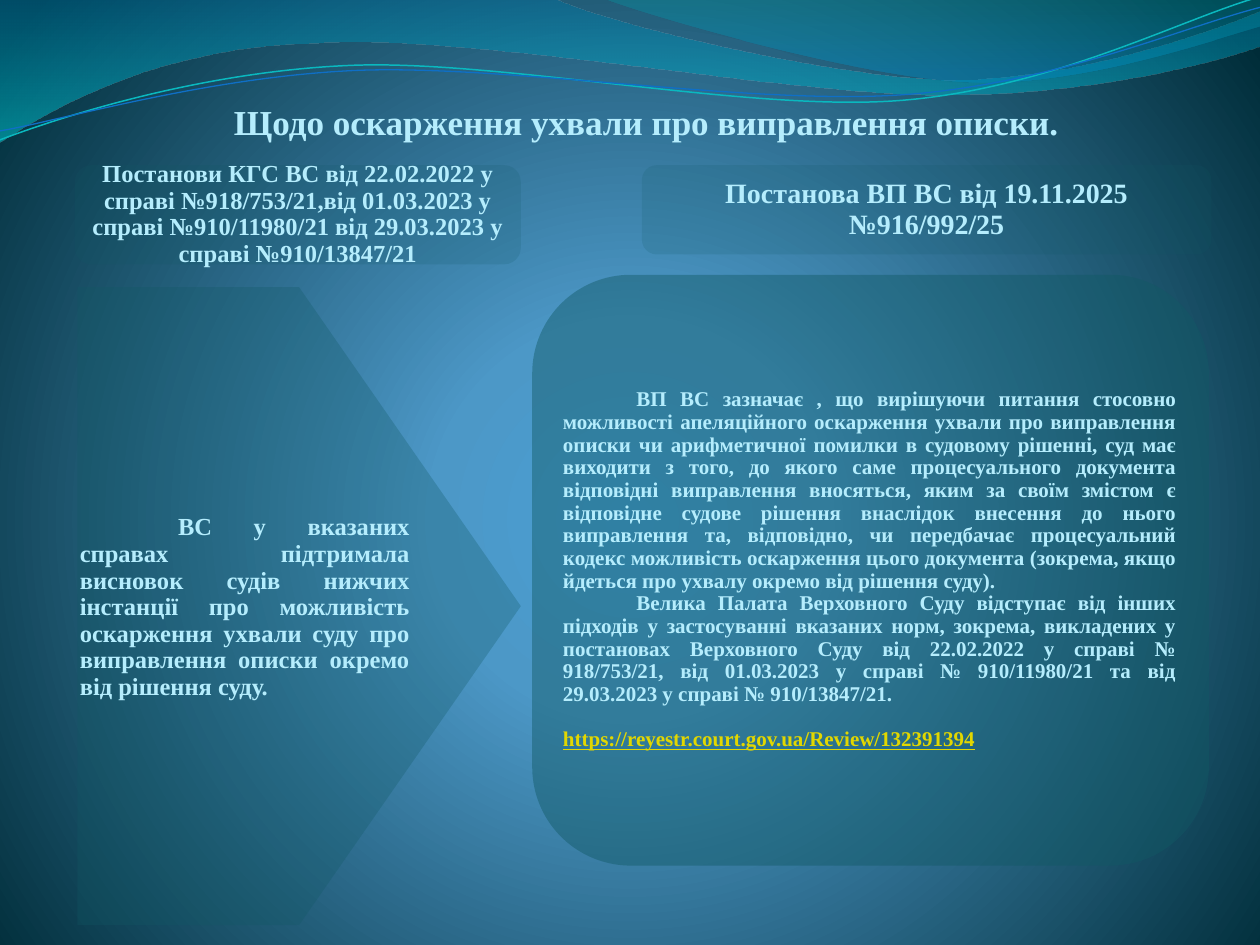
from lxml import etree
from pptx import Presentation
from pptx import util as u
from pptx.dml.color import RGBColor
from pptx.enum import shapes, text
from pptx.oxml.ns import qn

TEXT = "B5EDFD"
PANEL = "115964"
LINK = "E2D700"
FONT = "Times New Roman"


def rgb(value):
    return RGBColor.from_string(value)


def fade(shape, *opacities):
    """Give the colours of a shape, in order, an opacity in percent."""
    colors = list(shape._element.spPr.iter(qn("a:srgbClr")))
    for color, opacity in zip(colors, opacities):
        etree.SubElement(color, qn("a:alpha")).set("val", str(opacity * 1000))


presentation = Presentation()
presentation.slide_width = u.Cm(25.4)
presentation.slide_height = u.Cm(19.05)
slide = presentation.slides.add_slide(presentation.slide_layouts[6])

# Radial background
slide.background.fill.gradient()
gradient = slide._element.find(".//" + qn("a:gradFill"))
for child in list(gradient):
    gradient.remove(child)
stop_list = etree.SubElement(gradient, qn("a:gsLst"))
for position, value in [(0, "4AA0D6"), (25, "4C98C7"), (100, "002C38")]:
    stop = etree.SubElement(stop_list, qn("a:gs"), pos=str(position * 1000))
    etree.SubElement(stop, qn("a:srgbClr"), val=value)
circle = etree.SubElement(gradient, qn("a:path"), path="circle")
etree.SubElement(circle, qn("a:fillToRect"), l="10000", t="110000", r="10000", b="100000")

# Waves at the top, in cm: pairs are straight steps, sixes are Bezier curves.
# Each has gradient stops (position, colour, opacity) or a line (colour, width).
waves = [
    ([(0, 0), (11.18, -0.03), (12.09, 0.43, 16.87, 1.6, 19.25, 1.6),
      (21.67, 1.6, 24.33, 0.66, 25.4, 0.23), (25.43, 0.91),
      (24.97, 1.12, 22.1, 1.93, 18.95, 1.91), (15.8, 1.91, 9.7, 0.71, 6.53, 0.86),
      (3.25, 0.91, 1.17, 2.11, -0.03, 2.87)],
     [(0, "0074A1", 45), (1, "00C6CF", 55)], None),
    ([(12.17, -0.03), (12.93, 0.28, 17.32, 1.57, 19.53, 1.65),
      (21.74, 1.75, 24.41, 0.81, 25.4, 0.53), (25.4, 0)],
     [(0, "00A1A9", 30), (0.8, "008BBF", 45)], None),
    ([(0, 2.82), (1.22, 2.36, 4.01, 1.45, 7.04, 1.32),
      (10.03, 1.19, 15.06, 2.26, 18.11, 2.03), (21.16, 1.8, 23.83, 0.38, 25.35, -0.05)],
     None, ("0AB8BF", 0.85)),
    ([(0, 2.64), (1.19, 2.44, 4.17, 1.55, 7.19, 1.42),
      (10.24, 1.3, 15.16, 2.13, 18.21, 1.91), (21.23, 1.7, 23.9, 0.53, 25.4, 0.15)],
     None, ("0F6FC6", 0.75)),
]
for steps, stops, line in waves:
    points = [(u.Cm(step[i]), u.Cm(step[i + 1]))
              for step in steps for i in range(0, len(step), 2)]
    builder = slide.shapes.build_freeform(*points[0])
    builder.add_line_segments(points[1:], close=stops is not None)
    shape = builder.convert_to_shape()
    shape.shadow.inherit = False

    # Join the three points of each curve into one Bezier segment
    segments = iter(list(shape._element.iter(qn("a:lnTo"))))
    for step in steps[1:]:
        segment = next(segments)
        if len(step) == 6:
            segment.tag = qn("a:cubicBezTo")
            for _ in range(2):
                extra = next(segments)
                segment.append(extra[0])
                extra.getparent().remove(extra)

    if stops:
        shape.line.fill.background()
        shape.fill.gradient()
        shape.fill.gradient_angle = 270
        for stop, (position, value, _) in zip(shape.fill.gradient_stops, stops):
            stop.position = position
            stop.color.rgb = rgb(value)
        fade(shape, *[opacity for _, _, opacity in stops])
    else:
        shape.fill.background()
        shape.line.color.rgb = rgb(line[0])
        shape.line.width = u.Pt(line[1])

# Translucent panels: preset, box in cm, opacity
kinds = shapes.MSO_SHAPE
panels = [
    (kinds.PENTAGON, (1.56, 5.79, 8.94, 12.86), 29),
    (kinds.FLOWCHART_ALTERNATE_PROCESS, (10.73, 5.54, 13.64, 11.91), 44),
    (kinds.ROUNDED_RECTANGLE, (1.51, 3.33, 8.99, 2), 17),
    (kinds.ROUNDED_RECTANGLE, (12.94, 3.33, 11.48, 1.8), 16),
]
for kind, box, opacity in panels:
    shape = slide.shapes.add_shape(kind, *map(u.Cm, box))
    shape.shadow.inherit = False
    shape.fill.solid()
    shape.fill.fore_color.rgb = rgb(PANEL)
    shape.line.fill.background()
    fade(shape, opacity)

# Texts: box in cm, margins in cm (left, top, right, bottom), size, line spacing,
# alignment, anchor, tab stop in cm, size of the tab, paragraphs
center, justify = text.PP_ALIGN.CENTER, text.PP_ALIGN.JUSTIFY
middle, bottom = text.MSO_ANCHOR.MIDDLE, text.MSO_ANCHOR.BOTTOM
texts = [
    ((1.7, 0.91, 22.71, 2.79), (0, 0, 0.05, 0.82), 20, 1, center, bottom, None, None,
     ["Щодо оскарження ухвали про виправлення описки."]),
    ((1.56, 5.79, 6.7, 12.86), (0.05, 0.03, 0, 0.03), 14, 0.9, justify, middle, 1.98, 16,
     ["\tВС у вказаних справах підтримала висновок судів нижчих інстанції про можливість "
      "оскарження ухвали суду про виправлення описки окремо від рішення суду."]),
    ((11.3, 6.12, 12.47, 10.74), (0.05,) * 4, 12, 0.9, justify, middle, 1.48, None,
     ["\tВП ВС зазначає , що вирішуючи питання стосовно можливості апеляційного оскарження "
      "ухвали про виправлення описки чи арифметичної помилки в судовому рішенні, суд має "
      "виходити з того, до якого саме процесуального документа відповідні виправлення "
      "вносяться, яким за своїм змістом є відповідне судове рішення внаслідок внесення до "
      "нього виправлення та, відповідно, чи передбачає процесуальний кодекс можливість "
      "оскарження цього документа (зокрема, якщо йдеться про ухвалу окремо від рішення суду).",
      "\tВелика Палата Верховного Суду відступає від інших підходів у застосуванні вказаних "
      "норм, зокрема, викладених у постановах Верховного Суду від 22.02.2022 у справі "
      "№ 918/753/21, від 01.03.2023 у справі № 910/11980/21 та від 29.03.2023 у справі "
      "№ 910/13847/21.",
      "https://reyestr.court.gov.ua/Review/132391394"]),
    ((1.61, 3.43, 8.79, 1.8), (0.15,) * 4, 14, 0.9, center, middle, None, None,
     ["Постанови КГС ВС від 22.02.2022 у справі №918/753/21,від 01.03.2023 у справі "
      "№910/11980/21 від 29.03.2023 у справі №910/13847/21"]),
    ((13.03, 3.42, 11.3, 1.63), (0.18,) * 4, 16, 0.9, center, middle, None, None,
     ["Постанова ВП ВС від 19.11.2025 №916/992/25"]),
]
for box, margins, size, spacing, alignment, anchor, tab, tab_size, lines in texts:
    frame = slide.shapes.add_textbox(*map(u.Cm, box)).text_frame
    frame.word_wrap = True
    frame.vertical_anchor = anchor
    (frame.margin_left, frame.margin_top,
     frame.margin_right, frame.margin_bottom) = map(u.Cm, margins)
    frame.text = "\n".join(lines)
    for paragraph in frame.paragraphs:
        is_link = paragraph.text.startswith("https")
        paragraph.alignment = alignment
        paragraph.line_spacing = spacing
        if is_link:
            paragraph.space_before = u.Pt(13)
        if tab:
            tab_list = etree.SubElement(paragraph._p.get_or_add_pPr(), qn("a:tabLst"))
            etree.SubElement(tab_list, qn("a:tab"), pos=str(int(u.Cm(tab))), algn="l")
        if tab_size:
            words = paragraph.text.lstrip("\t")
            paragraph.text = "\t"
            paragraph.add_run().text = words
        for run in paragraph.runs:
            run.font.name = FONT
            run.font.size = u.Pt(tab_size if tab_size and run.text == "\t" else size)
            run.font.bold = True
            if is_link:
                run.font.underline = True
            run.font.color.rgb = rgb(LINK if is_link else TEXT)

presentation.save("out.pptx")
